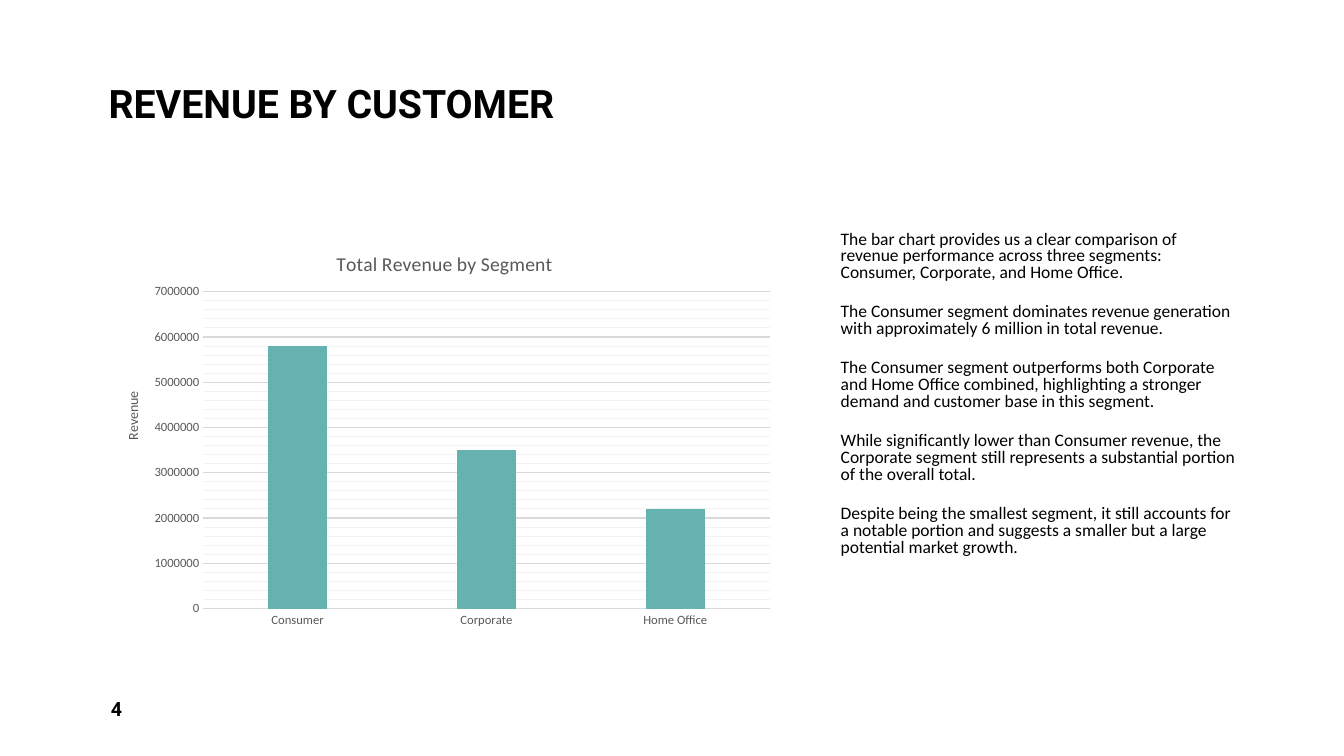
from pptx import Presentation
from pptx.chart.data import CategoryChartData
from pptx.dml.color import RGBColor
from pptx.enum.chart import XL_CHART_TYPE, XL_TICK_MARK
from pptx.enum.text import MSO_ANCHOR
from pptx.oxml.ns import qn
from pptx.util import Inches, Pt
from lxml import etree

COLUMNS = XL_CHART_TYPE.COLUMN_CLUSTERED
NO_TICK = XL_TICK_MARK.NONE
TOP, MIDDLE, BOTTOM = MSO_ANCHOR.TOP, MSO_ANCHOR.MIDDLE, MSO_ANCHOR.BOTTOM

COLORS = {
    "background": "FFFFFF",
    "text": "000000",
    "label": "595959",
    "grid": "D9D9D9",
    "minor_grid": "F2F2F2",
    "bar": "66B2B0",
}
HEADING = {"name": "Roboto", "size": Pt(28), "bold": True}
PAGE_NUMBER = {"name": "Roboto", "size": Pt(14), "bold": True}
BODY = {"name": "Calibri", "size": Pt(12.5)}
CHART_TEXT = {"name": "Calibri", "size": Pt(10)}
CHART_TITLE = {"name": "Calibri", "size": Pt(14), "bold": False}
AXIS_TITLE = {"name": "Calibri", "size": Pt(10), "bold": False}
AXIS_LABEL = {"name": "Calibri", "size": Pt(9)}
BODY_SPACING = {
    "line_spacing": 0.8,
    "space_before": Pt(10),
    "space_after": Pt(6),
}

REVENUE = {"Consumer": 5800000, "Corporate": 3500000, "Home Office": 2200000}
FINDINGS = [
    "The bar chart provides us a clear comparison of revenue performance "
    "across three segments: Consumer, Corporate, and Home Office.",
    "The Consumer segment dominates revenue generation with approximately "
    "6 million in total revenue.",
    "The Consumer segment outperforms both Corporate and Home Office combined, "
    "highlighting a stronger demand and customer base in this segment.",
    "While significantly lower than Consumer revenue, the Corporate segment "
    "still represents a substantial portion of the overall total.",
    "Despite being the smallest segment, it still accounts for a notable "
    "portion and suggests a smaller but a large potential market growth.",
]


def set_values(target, values):
    for name, value in values.items():
        setattr(target, name, value)


def set_layout(element, **fractions):
    """Place a chart part at fractions of the chart's width and height."""
    for old_layout in element.findall(qn("c:layout")):
        element.remove(old_layout)
    layout = etree.Element(qn("c:layout"))
    manual = etree.SubElement(layout, qn("c:manualLayout"))
    if "w" in fractions:
        etree.SubElement(manual, qn("c:layoutTarget")).set("val", "inner")
    for mode in ("xMode", "yMode"):
        etree.SubElement(manual, qn(f"c:{mode}")).set("val", "edge")
    for name, value in fractions.items():
        etree.SubElement(manual, qn(f"c:{name}")).set("val", str(value))
    text = element.find(qn("c:tx"))
    if text is None:
        element.insert(0, layout)
    else:
        text.addnext(layout)


def style_minor_gridlines(chart, color):
    parent = chart.element.find(".//" + qn("c:minorGridlines"))
    for tag in ("c:spPr", "a:ln", "a:solidFill", "a:srgbClr"):
        parent = etree.SubElement(parent, qn(tag))
        if tag == "a:ln":
            parent.set("w", str(Pt(0.75)))
    parent.set("val", str(color))


class SlideBuilder:
    def __init__(self, deck, colors):
        self.colors = {name: RGBColor.from_string(value) for name, value in colors.items()}
        self.page = deck.slides.add_slide(deck.slide_layouts[6])
        self.page.background.fill.solid()
        self.page.background.fill.fore_color.rgb = self.colors["background"]

    def style_font(self, font, values, color="text"):
        set_values(font, values)
        font.color.rgb = self.colors[color]

    def style_line(self, line, color):
        line.color.rgb = self.colors[color]
        line.width = Pt(0.75)

    def add_text(self, place, texts, font, spacing, anchor=TOP):
        box = self.page.shapes.add_textbox(*map(Inches, place))
        frame = box.text_frame
        set_values(frame, {"word_wrap": True, "vertical_anchor": anchor})
        for index, text in enumerate(texts):
            para = frame.add_paragraph() if index else frame.paragraphs[0]
            set_values(para, spacing)
            span = para.add_run()
            span.text = text
            self.style_font(span.font, font)

    def add_title(self, title, text, font, rotation, x, y):
        para = title.text_frame.paragraphs[0]
        span = para.add_run()
        span.text = text
        self.style_font(span.font, font, "label")
        body = title.element.find(".//" + qn("a:bodyPr"))
        body.set("rot", str(rotation * 60000))
        body.set("vert", "horz")
        set_layout(title.element, x=x, y=y)

    def add_column_chart(self, place, values):
        data = CategoryChartData(number_format="General")
        data.categories = list(values)
        data.add_series("Series 1", list(values.values()))
        frame = self.page.shapes.add_chart(COLUMNS, *map(Inches, place), data)
        chart = frame.chart
        chart.has_legend = False
        self.style_font(chart.font, CHART_TEXT)
        self.add_title(chart.chart_title, "Total Revenue by Segment", CHART_TITLE, 0, 0.34, 0.05)

        plot = chart.plots[0]
        set_values(plot, {"gap_width": 219, "overlap": -27, "vary_by_categories": False})
        fill = plot.series[0].format.fill
        fill.solid()
        fill.fore_color.rgb = self.colors["bar"]

        for axis in (chart.category_axis, chart.value_axis):
            set_values(axis, {"major_tick_mark": NO_TICK, "minor_tick_mark": NO_TICK})
            self.style_font(axis.tick_labels.font, AXIS_LABEL, "label")
        self.style_line(chart.category_axis.format.line, "grid")

        value_axis = chart.value_axis
        set_values(value_axis, {
            "minimum_scale": 0,
            "maximum_scale": 7000000,
            "major_unit": 1000000,
            "minor_unit": 200000,
            "has_major_gridlines": True,
            "has_minor_gridlines": True,
        })
        value_axis.format.line.fill.background()
        self.style_line(value_axis.major_gridlines.format.line, "grid")
        style_minor_gridlines(chart, self.colors["minor_grid"])
        self.add_title(value_axis.axis_title, "Revenue", AXIS_TITLE, -90, 0.03, 0.4)
        plot_area = chart.element.find(".//" + qn("c:plotArea"))
        set_layout(plot_area, x=0.15, y=0.16, w=0.83, h=0.78)


def main():
    deck = Presentation()
    deck.slide_width, deck.slide_height = Inches(13.33), Inches(7.5)
    builder = SlideBuilder(deck, COLORS)
    builder.add_text((0.98, 0.08, 11.38, 1.23), ["REVENUE BY CUSTOMER"],
                     HEADING, {"line_spacing": 0.9}, BOTTOM)
    builder.add_text((8.24, 2.25, 4.12, 4.23), FINDINGS, BODY, BODY_SPACING)
    builder.add_text((1, 6.83, 2.92, 0.4), ["4"], PAGE_NUMBER, {}, MIDDLE)
    builder.add_column_chart((1, 2.25, 6.77, 4.03), REVENUE)
    deck.save("out.pptx")


if __name__ == "__main__":
    main()
